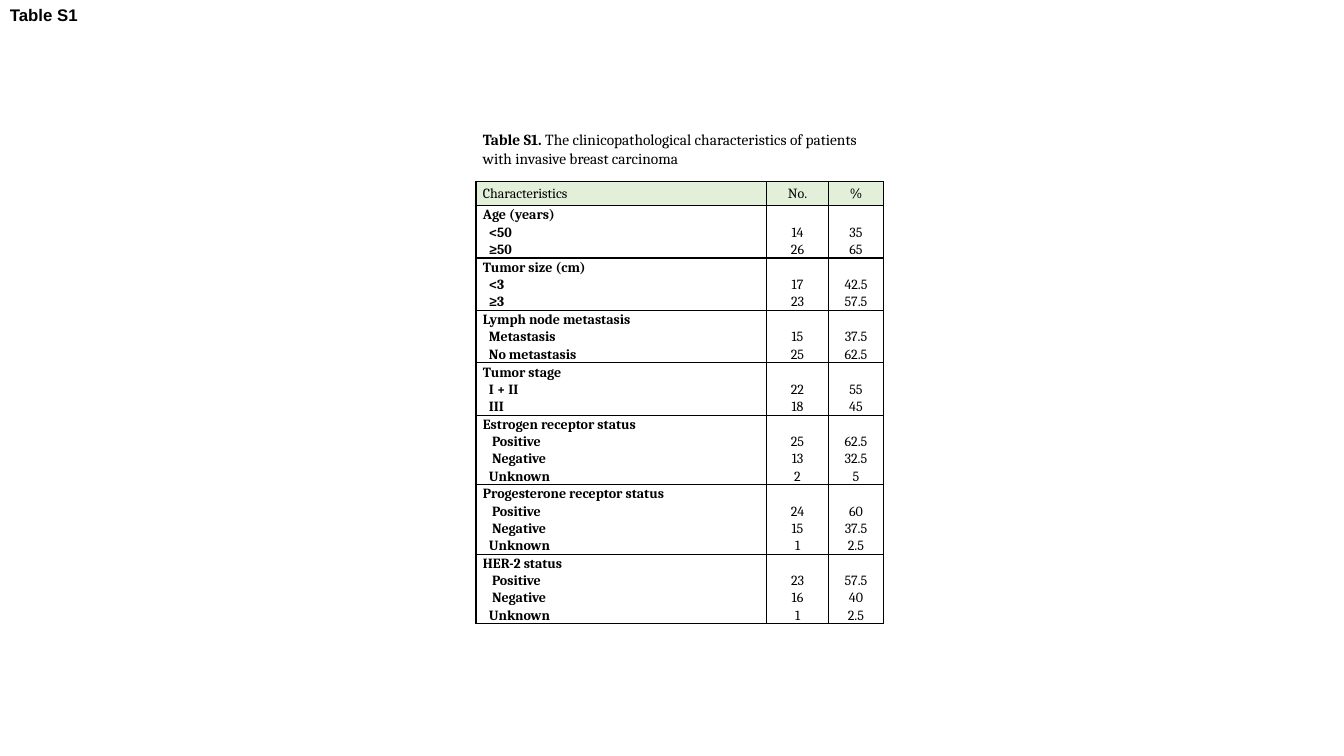
"""Build a slide with a table of patient characteristics."""
from dataclasses import dataclass
from typing import Optional

from lxml import etree
from pptx import Presentation
from pptx import util as u
from pptx.dml.color import RGBColor
from pptx.enum import text
from pptx.oxml import ns

BLACK = RGBColor(0x00, 0x00, 0x00)
PALE_GREEN = RGBColor(0xE2, 0xEF, 0xD9)
GRID_COLUMNS, GRID_ROWS = 1333, 750
GRID_STEP = u.Inches(0.01)
COLUMN_SPANS = (288, 62, 54)
CAPTION_ROWS, HEADER_ROWS = 53, 24
GROUP_ROWS = {3: 52, 4: 69}
EDGES = ("L", "R", "T", "B")
LEFT, CENTER = text.PP_ALIGN.LEFT, text.PP_ALIGN.CENTER
MIDDLE, BOTTOM = text.MSO_ANCHOR.MIDDLE, text.MSO_ANCHOR.BOTTOM


@dataclass(frozen=True)
class Level:
    label: str
    count: str
    percent: str
    indent: int = 6


@dataclass(frozen=True)
class Group:
    title: str
    levels: tuple[Level, ...]


def receptor(title: str, positive: tuple, negative: tuple, unknown: tuple) -> Group:
    return Group(title, (Level("Positive", *positive, indent=9),
                         Level("Negative", *negative, indent=9),
                         Level("Unknown", *unknown)))


GROUPS = (
    Group("Age (years)", (Level("<50", "14", "35"), Level("≥50", "26", "65"))),
    Group("Tumor size (cm)", (Level("<3", "17", "42.5"), Level("≥3", "23", "57.5"))),
    Group("Lymph node metastasis", (Level("Metastasis", "15", "37.5"),
                                    Level("No metastasis", "25", "62.5"))),
    Group("Tumor stage", (Level("I + II", "22", "55"), Level("III", "18", "45"))),
    receptor("Estrogen receptor status", ("25", "62.5"), ("13", "32.5"), ("2", "5")),
    receptor("Progesterone receptor status", ("24", "60"), ("15", "37.5"), ("1", "2.5")),
    receptor("HER-2 status", ("23", "57.5"), ("16", "40"), ("1", "2.5")),
)


def grid(steps: int) -> u.Emu:
    return u.Emu(steps * GRID_STEP)


def write(para, words: str, *, size: float = 10, bold: bool = False,
          font: str = "Cambria", align=LEFT, indent: int = 0,
          spacing: Optional[float] = 1.07) -> None:
    para.alignment = align
    para.line_spacing = spacing
    if indent:
        para._p.get_or_add_pPr().set("marL", str(grid(indent)))
    span = para.add_run()
    span.text = words
    span.font.name, span.font.size, span.font.bold = font, u.Pt(size), bold
    span.font.color.rgb = BLACK


def style_cell(cell, *, lines: tuple = EDGES, fill: Optional[RGBColor] = None,
               anchor=MIDDLE, bottom: int = 0) -> None:
    cell.margin_left = cell.margin_right = grid(7)
    cell.margin_top, cell.margin_bottom = 0, grid(bottom)
    cell.vertical_anchor = anchor
    properties = cell._tc.get_or_add_tcPr()
    for edge in EDGES:
        line = etree.SubElement(properties, ns.qn(f"a:ln{edge}"), w=str(u.Pt(1)))
        if edge in lines:
            paint = etree.SubElement(line, ns.qn("a:solidFill"))
            etree.SubElement(paint, ns.qn("a:srgbClr"), val=str(BLACK))
        else:
            etree.SubElement(line, ns.qn("a:noFill"))
    if fill is None:
        cell.fill.background()
    else:
        cell.fill.solid()
        cell.fill.fore_color.rgb = fill


def write_lines(cell, lines: list[str], **style) -> None:
    for index, words in enumerate(lines):
        frame = cell.text_frame
        para = frame.add_paragraph() if index else frame.paragraphs[0]
        write(para, words, **style)


def fill_group(cells, group: Group) -> None:
    for cell in cells:
        style_cell(cell, anchor=BOTTOM)
    title, counts, percents = cells
    write_lines(title, [group.title], bold=True)
    for level in group.levels:
        write(title.text_frame.add_paragraph(), level.label, bold=True, indent=level.indent)
    write_lines(counts, [level.count for level in group.levels], align=CENTER)
    write_lines(percents, [level.percent for level in group.levels], align=CENTER)


def add_characteristics(page) -> None:
    heights = [CAPTION_ROWS, HEADER_ROWS] + [GROUP_ROWS[len(g.levels) + 1] for g in GROUPS]
    table = page.shapes.add_table(len(heights), len(COLUMN_SPANS), grid(472), grid(127),
                                  grid(sum(COLUMN_SPANS)), grid(sum(heights))).table
    table.first_row = table.horz_banding = False
    for column, width in zip(table.columns, COLUMN_SPANS):
        column.width = grid(width)
    for row, height in zip(table.rows, heights):
        row.height = grid(height)

    caption, header, *bodies = [list(row.cells) for row in table.rows]
    for cell in caption:
        style_cell(cell, lines=("B",), bottom=11)
    caption[0].merge(caption[-1])
    para = caption[0].text_frame.paragraphs[0]
    write(para, "Table S1.", size=11, bold=True)
    write(para, " The clinicopathological characteristics of patients"
                " with invasive breast carcinoma", size=11)
    for cell, words, align in zip(header, ("Characteristics", "No.", "%"),
                                  (LEFT, CENTER, CENTER)):
        style_cell(cell, fill=PALE_GREEN)
        write_lines(cell, [words], align=align)
    for cells, group in zip(bodies, GROUPS):
        fill_group(cells, group)


def add_heading(page) -> None:
    box = page.shapes.add_textbox(0, 0, grid(207), grid(30))
    box.text_frame.word_wrap = True
    box.text_frame.auto_size = text.MSO_AUTO_SIZE.SHAPE_TO_FIT_TEXT
    write(box.text_frame.paragraphs[0], "Table S1", size=12, bold=True,
          font="Arial", spacing=None)


def main() -> None:
    deck = Presentation()
    deck.slide_width, deck.slide_height = grid(GRID_COLUMNS), grid(GRID_ROWS)
    page = deck.slides.add_slide(deck.slide_layouts[6])
    add_characteristics(page)
    add_heading(page)
    deck.save("out.pptx")


if __name__ == "__main__":
    main()
